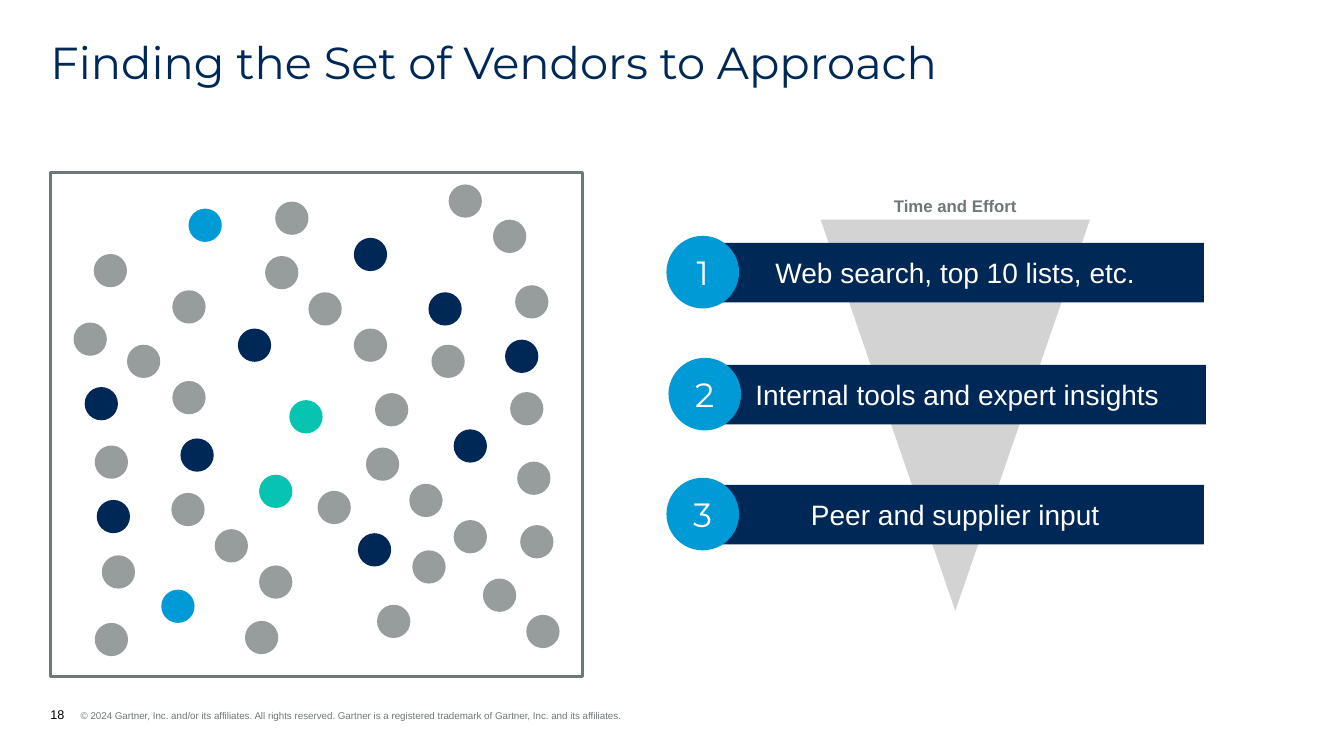
from lxml.etree import SubElement
from pptx import Presentation
from pptx.dml.color import RGBColor
from pptx.enum.shapes import MSO_SHAPE
from pptx.enum.text import MSO_ANCHOR, PP_ALIGN
from pptx.oxml.ns import qn
from pptx.util import Inches, Pt

COLORS = {
    "navy": "002856",
    "blue": "009AD7",
    "teal": "06C4B0",
    "dot_gray": "979D9D",
    "funnel_gray": "D3D3D3",
    "slate": "6F7878",
    "white": "FFFFFF",
    "black": "000000",
}
DOT_SIZE = 0.33
BADGE_SIZE = 0.72

# Left and top of every vendor dot, by colour
VENDOR_DOTS = {
    "dot_gray": [
        (0.93, 2.52), (1.71, 2.88), (1.26, 3.42), (1.71, 3.78), (2.63, 2.54),
        (2.73, 2), (3.06, 2.9), (3.51, 3.26), (0.94, 4.42), (1.7, 4.89),
        (2.13, 5.25), (2.57, 5.61), (3.63, 4.44), (3.72, 3.9), (4.06, 4.8),
        (4.5, 5.16), (4.45, 1.83), (4.89, 2.18), (5.11, 2.83), (5.06, 3.89),
        (5.13, 4.58), (3.74, 6), (4.09, 5.46), (4.79, 5.74), (5.16, 5.21),
        (5.22, 6.1), (1.01, 5.51), (2.43, 6.16), (3.15, 4.87), (0.94, 6.18),
        (0.73, 3.2), (4.28, 3.42),
    ],
    "navy": [
        (2.36, 3.26), (3.51, 2.36), (1.79, 4.35), (4.5, 4.26), (4.25, 2.9),
        (5.01, 3.37), (3.55, 5.29), (0.96, 4.96), (0.84, 3.84),
    ],
    "blue": [(1.87, 2.07), (1.6, 5.85)],
    "teal": [(2.57, 4.71), (2.87, 3.97)],
}

# Badge left and top, and label of each step
STEPS = [
    (6.61, 2.34, "Web search, top 10 lists, etc."),
    (6.63, 3.55, "Internal tools and expert insights"),
    (6.61, 4.74, "Peer and supplier input"),
]


def add_filled_shape(kind, left, top, width, height, fill):
    shape = page.shapes.add_shape(
        kind, Inches(left), Inches(top), Inches(width), Inches(height))
    shape.shadow.inherit = False
    shape.fill.solid()
    shape.fill.fore_color.rgb = RGBColor.from_string(COLORS[fill])
    shape.line.fill.background()
    return shape


def style_text(holder, size, color, typeface="Arial", bold=False):
    """Set the font of a paragraph or a run."""
    holder.font.size = Pt(size)
    holder.font.name = typeface
    holder.font.bold = bold
    holder.font.color.rgb = RGBColor.from_string(COLORS[color])


deck = Presentation()
deck.slide_width = Inches(13.33)
deck.slide_height = Inches(7.5)
page = deck.slides.add_slide(deck.slide_layouts[5])

# Title
title = page.shapes.title
title.left, title.top = Inches(0.5), Inches(0.4)
title.width, title.height = Inches(12.33), Inches(0.48)
frame = title.text_frame
frame.text = "Finding the Set of Vendors to Approach"
frame.margin_left = frame.margin_top = frame.margin_right = frame.margin_bottom = 0
frame.vertical_anchor = MSO_ANCHOR.TOP
para = frame.paragraphs[0]
para.alignment = PP_ALIGN.LEFT
para.line_spacing = 0.9
para.space_before = Pt(0)
style_text(para.runs[0], 32, "navy", "Montserrat")

# Footer
footer = page.shapes.add_textbox(Inches(0.5), Inches(7.01), Inches(7.85), Inches(0.15))
frame = footer.text_frame
frame.word_wrap = True
frame.margin_left = frame.margin_top = frame.margin_right = frame.margin_bottom = 0
frame.vertical_anchor = MSO_ANCHOR.BOTTOM
para = frame.paragraphs[0]
properties = para._p.get_or_add_pPr()
properties.set("marL", str(Inches(0.3)))
properties.set("indent", str(-Inches(0.3)))
tabs = SubElement(properties, qn("a:tabLst"))
SubElement(tabs, qn("a:tab"), pos=str(Inches(0.32)), algn="l")
for text, size, color in [
    ("18", 9, "black"),
    ("\t© 2024 Gartner, Inc. and/or its affiliates. All rights reserved. "
     "Gartner is a registered trademark of Gartner, Inc. and its affiliates.", 7, "slate"),
]:
    span = para.add_run()
    span.text = text
    style_text(span, size, color)

# Vendor field
field = add_filled_shape(MSO_SHAPE.RECTANGLE, 0.5, 1.71, 5.28, 5, "white")
field.line.color.rgb = RGBColor.from_string(COLORS["slate"])
field.line.width = Pt(2)
for color, places in VENDOR_DOTS.items():
    for left, top in places:
        add_filled_shape(MSO_SHAPE.OVAL, left, top, DOT_SIZE, DOT_SIZE, color)

# Funnel with its steps
funnel = add_filled_shape(MSO_SHAPE.ISOSCELES_TRIANGLE, 8.14, 2.18, 2.67, 3.88, "funnel_gray")
funnel.rotation = 180

effort = add_filled_shape(MSO_SHAPE.RECTANGLE, 8.6, 1.91, 1.75, 0.26, "white")
labels = [(effort, "Time and Effort", 12, "slate", "Arial", True)]
for number, (left, top, text) in enumerate(STEPS, start=1):
    bar = add_filled_shape(MSO_SHAPE.RECTANGLE, left + 0.4, top + 0.07, 4.93, 0.59, "navy")
    badge = add_filled_shape(MSO_SHAPE.OVAL, left, top, BADGE_SIZE, BADGE_SIZE, "blue")
    labels.append((bar, text, 20, "white", "Arial", False))
    labels.append((badge, str(number), 24, "white", "Montserrat", False))

for box, text, size, color, typeface, bold in labels:
    box.text_frame.text = text
    box.text_frame.vertical_anchor = MSO_ANCHOR.MIDDLE
    para = box.text_frame.paragraphs[0]
    para.alignment = PP_ALIGN.CENTER
    style_text(para.runs[0], size, color, typeface, bold)

deck.save("out.pptx")
